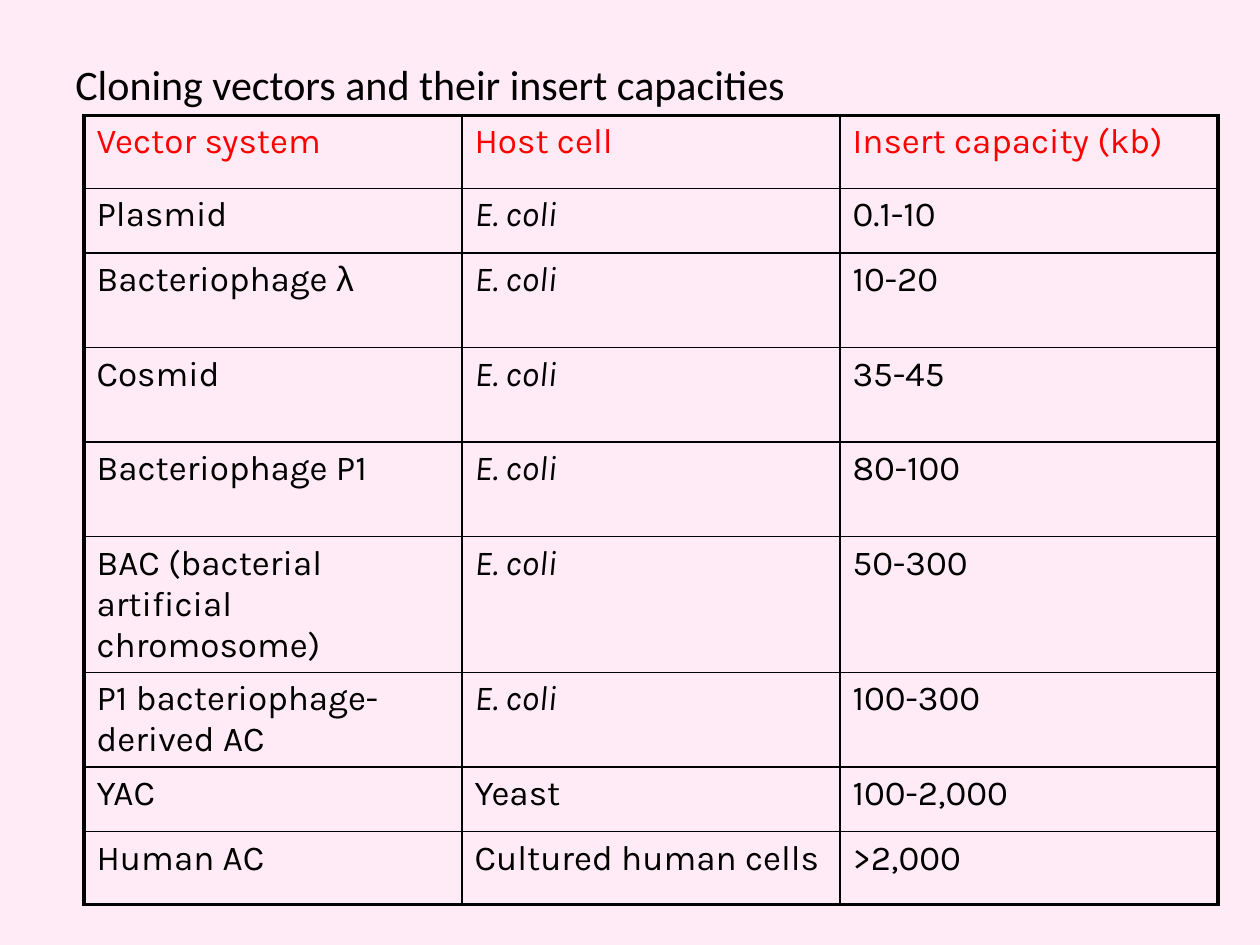
from dataclasses import dataclass

from lxml.etree import SubElement
from pptx import Presentation
from pptx.dml.color import RGBColor
from pptx.enum.text import MSO_AUTO_SIZE
from pptx.oxml.ns import qn
from pptx.util import Pt


@dataclass(frozen=True)
class Theme:
    background: RGBColor = RGBColor(0xFF, 0xEB, 0xF5)
    text: RGBColor = RGBColor(0, 0, 0)
    heading: RGBColor = RGBColor(0xFF, 0, 0)
    title_font: str = "Calibri"
    table_font: str = "Karla"
    greek_font: str = "Arial"
    title_size: Pt = Pt(24)
    table_size: Pt = Pt(20)
    outer_line: Pt = Pt(2.25)
    inner_line: Pt = Pt(1)


THEME = Theme()
ROWS = [
    # height, vector system, host cell, insert capacity
    (41.75, "Vector system", "Host cell", "Insert capacity (kb)"),
    (37, "Plasmid", "E. coli", "0.1-10"),
    (54, "Bacteriophage λ", "E. coli", "10-20"),
    (54, "Cosmid", "E. coli", "35-45"),
    (54, "Bacteriophage P1", "E. coli", "80-100"),
    (77, "BAC (bacterial artificial chromosome)", "E. coli", "50-300"),
    (54, "P1 bacteriophage-derived AC", "E. coli", "100-300"),
    (37, "YAC", "Yeast", "100-2,000"),
    (41.75, "Human AC", "Cultured human cells", ">2,000"),
]
COLUMN_COUNT = 3
COLUMN_WIDTH = 216


def set_borders(cell, outer_sides):
    """Draw all four borders, heavier on the sides at the table's edge."""
    properties = cell._tc.get_or_add_tcPr()
    for side in "LRTB":
        width = THEME.outer_line if side in outer_sides else THEME.inner_line
        line = SubElement(properties, qn(f"a:ln{side}"), w=str(int(width)))
        fill = SubElement(line, qn("a:solidFill"))
        SubElement(fill, qn("a:srgbClr"), val=str(THEME.text))


deck = Presentation()
deck.slide_width, deck.slide_height = Pt(720), Pt(540)
page = deck.slides.add_slide(deck.slide_layouts[6])
page.background.fill.solid()
page.background.fill.fore_color.rgb = THEME.background

frame = page.shapes.add_table(
    len(ROWS), COLUMN_COUNT, Pt(48), Pt(66),
    Pt(COLUMN_COUNT * COLUMN_WIDTH), Pt(sum(row[0] for row in ROWS)),
)
table = frame.table
table.first_row = False
table.horz_banding = False
for column in table.columns:
    column.width = Pt(COLUMN_WIDTH)

for row_index, (height, *texts) in enumerate(ROWS):
    table.rows[row_index].height = Pt(height)
    for column_index, text in enumerate(texts):
        cell = table.cell(row_index, column_index)
        edges = {
            "L": column_index == 0,
            "R": column_index == COLUMN_COUNT - 1,
            "T": row_index == 0,
            "B": row_index == len(ROWS) - 1,
        }
        set_borders(cell, [side for side, is_outer in edges.items() if is_outer])
        cell.fill.background()

        para = cell.text_frame.paragraphs[0]
        para.font.size = THEME.table_size
        para.font.color.rgb = THEME.heading if row_index == 0 else THEME.text
        para.font.italic = text == "E. coli"
        para.font.name = THEME.table_font
        latin, greek, _ = text.partition("λ")
        para.add_run().text = latin
        if greek:
            span = para.add_run()
            span.text = greek
            span.font.name = THEME.greek_font

title_box = page.shapes.add_textbox(Pt(36), Pt(30), Pt(612), Pt(36))
title_box.text_frame.word_wrap = True
title_box.text_frame.auto_size = MSO_AUTO_SIZE.SHAPE_TO_FIT_TEXT
title = title_box.text_frame.paragraphs[0]
title.text = "Cloning vectors and their insert capacities"
title.font.name = THEME.title_font
title.font.size = THEME.title_size
title.font.color.rgb = THEME.text

deck.save("out.pptx")
